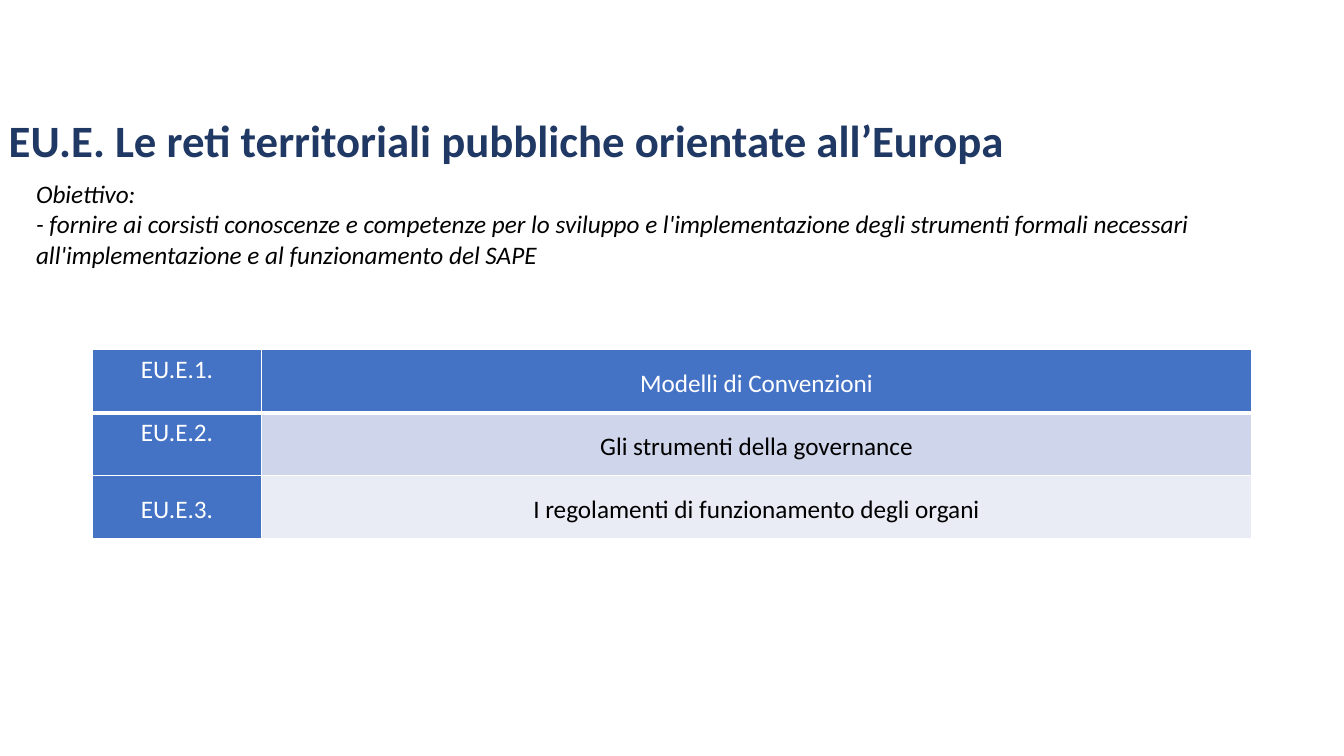
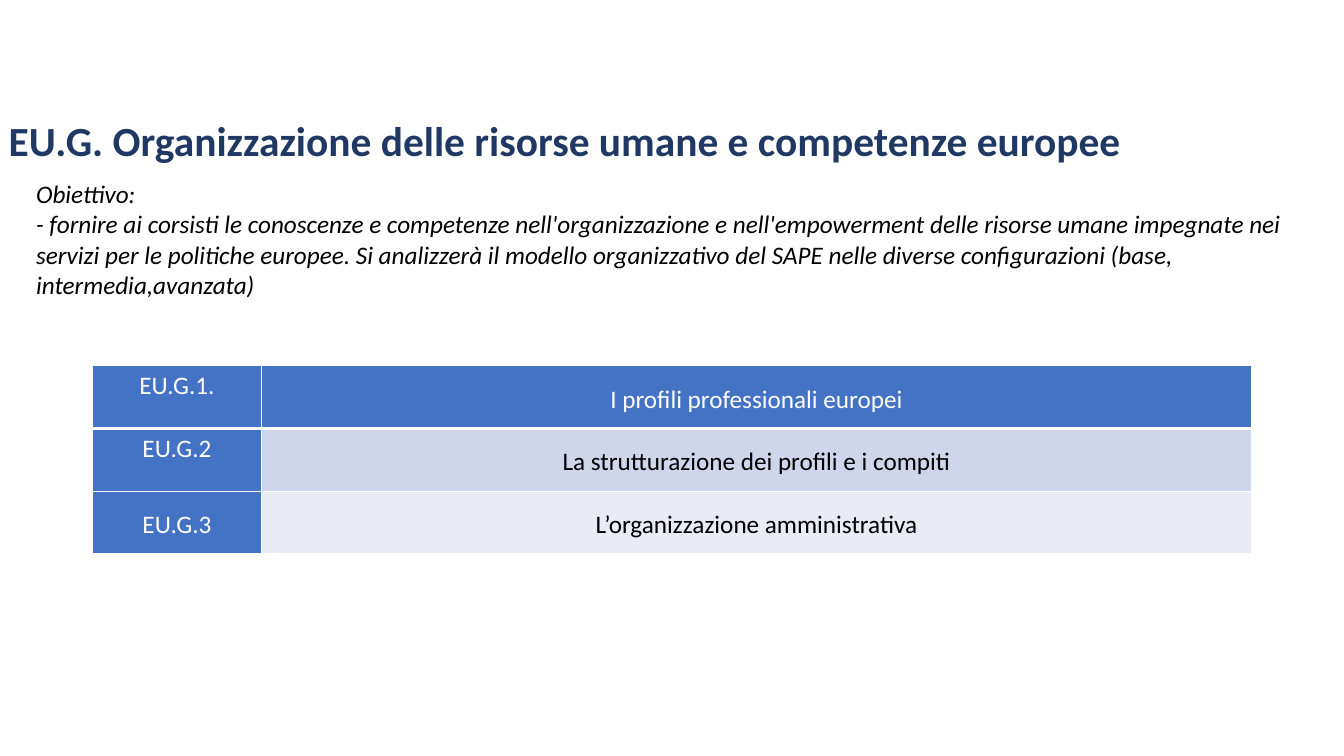
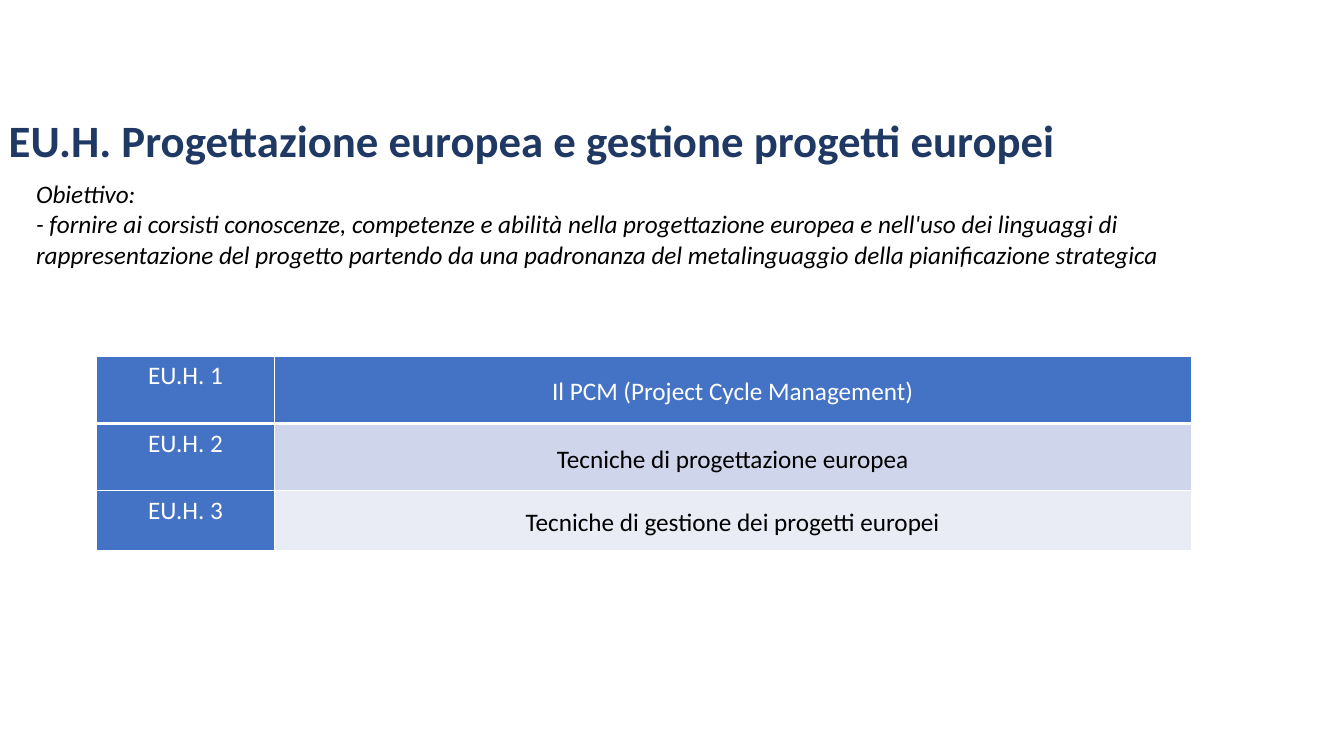
from lxml.etree import SubElement
from pptx import Presentation
from pptx.dml.color import RGBColor
from pptx.enum.text import MSO_ANCHOR, MSO_AUTO_SIZE, PP_ALIGN
from pptx.oxml.ns import qn
from pptx.util import Cm, Pt


def color(code):
    return RGBColor.from_string(code)


def write(frame, *lines, size=18, ink="000000", bold=False, italic=False,
          align=PP_ALIGN.LEFT, pitch=None, after=0):
    frame.word_wrap = True
    for index, line in enumerate(lines):
        para = frame.add_paragraph() if index else frame.paragraphs[0]
        para.alignment = align
        para.line_spacing = pitch
        para.space_after = Pt(after)
        run = para.add_run()
        run.text = line
        font = run.font
        font.name, font.size = Deck.face, Pt(size)
        font.bold, font.italic = bold, italic
        font.color.rgb = color(ink)


class Deck:
    """Hold the shared style and the current slide."""

    face = "Calibri"
    navy, blue, white, black = "203864", "4472C4", "FFFFFF", "000000"
    bands = ("E9EBF5", "CFD5EA")

    def __init__(self):
        self.file = Presentation()
        self.file.slide_width, self.file.slide_height = Cm(33.87), Cm(19.05)

    def start(self):
        self.slide = self.file.slides.add_slide(self.file.slide_layouts[6])

    def box(self, left, top, width, height):
        shape = self.slide.shapes.add_textbox(Cm(left), Cm(top), Cm(width), Cm(height))
        return shape.text_frame

    def title(self, text, size):
        frame = self.box(-0.03, 2.51, 29.21, 2.18)
        frame.vertical_anchor = MSO_ANCHOR.MIDDLE
        write(frame, text, size=size, ink=self.navy, bold=True, pitch=0.9)

    def goal(self, text, height):
        frame = self.box(0.66, 4.37, 32, height)
        frame.auto_size = MSO_AUTO_SIZE.SHAPE_TO_FIT_TEXT
        write(frame, "Obiettivo:", text, italic=True)

    def border(self, cell, row):
        props = cell._tc.get_or_add_tcPr()
        widths = {"L": 1, "R": 1, "T": 3 if row == 1 else 1, "B": 1 if row else 3}
        for side, width in widths.items():
            line = SubElement(props, qn(f"a:ln{side}"), w=str(Pt(width)))
            fill = SubElement(line, qn("a:solidFill"))
            SubElement(fill, qn("a:srgbClr"), val=self.white)

    def cell(self, cell, text, row, col, middle, after):
        self.border(cell, row)
        main = row == 0 or col == 0
        cell.fill.solid()
        cell.fill.fore_color.rgb = color(self.blue if main else self.bands[row % 2])
        cell.margin_left = cell.margin_right = Cm(0.19)
        cell.margin_top = cell.margin_bottom = 0
        cell.vertical_anchor = MSO_ANCHOR.MIDDLE if middle else MSO_ANCHOR.TOP
        write(cell.text_frame, text, ink=self.white if main else self.black,
              align=PP_ALIGN.CENTER, pitch=1.15, after=after)

    def table(self, data, left, top, cols, rows, after=10, low=True):
        frame = self.slide.shapes.add_table(
            len(rows), len(cols), Cm(left), Cm(top), Cm(sum(cols)), Cm(sum(rows)))
        grid = frame.table
        for col, width in enumerate(cols):
            grid.columns[col].width = Cm(width)
        for row, height in enumerate(rows):
            grid.rows[row].height = Cm(height)
            for col, text in enumerate(data[row]):
                middle = col == 1 or (low and row == len(rows) - 1)
                self.cell(grid.cell(row, col), text, row, col, middle, after)


PAGES = [
    dict(
        title="EU.E. Le reti territoriali pubbliche orientate all’Europa", size=32,
        goal="- fornire ai corsisti conoscenze e competenze per lo sviluppo e "
             "l'implementazione degli strumenti formali necessari "
             "all'implementazione e al funzionamento del SAPE",
        height=2.57,
        table=dict(
            data=[("EU.E.1.", "Modelli di Convenzioni"),
                  ("EU.E.2.", "Gli strumenti della governance"),
                  ("EU.E.3.", "I regolamenti di funzionamento degli organi")],
            left=2.34, top=8.81, cols=(4.24, 24.97), rows=[1.59] * 3)),
    dict(
        title="EU.G. Organizzazione delle risorse umane e competenze europee", size=29.6,
        goal="- fornire ai corsisti le conoscenze e competenze nell'organizzazione e "
             "nell'empowerment delle risorse umane impegnate nei servizi per le "
             "politiche europee. Si analizzerà il modello organizzativo del SAPE "
             "nelle diverse configurazioni (base, intermedia,avanzata)",
        height=3.33,
        table=dict(
            data=[("EU.G.1.", "I profili professionali europei"),
                  ("EU.G.2", "La strutturazione dei profili e i compiti"),
                  ("EU.G.3", "L’organizzazione amministrativa")],
            left=2.34, top=9.22, cols=(4.24, 24.97), rows=[1.58] * 3)),
    dict(
        title="EU.H. Progettazione europea e gestione progetti europei", size=32,
        goal="- fornire ai corsisti conoscenze, competenze e abilità nella "
             "progettazione europea e nell'uso dei linguaggi di rappresentazione "
             "del progetto partendo da una padronanza del metalinguaggio della "
             "pianificazione strategica",
        height=2.57,
        table=dict(
            data=[("EU.H. 1", "Il PCM (Project Cycle Management)"),
                  ("EU.H. 2", "Tecniche di progettazione europea"),
                  ("EU.H. 3", "Tecniche di gestione dei progetti europei")],
            left=2.44, top=8.97, cols=(4.47, 23.11), rows=(1.7, 1.7, 1.5),
            after=0, low=False)),
]


def main():
    deck = Deck()
    for page in PAGES:
        deck.start()
        deck.table(**page["table"])
        deck.goal(page["goal"], page["height"])
        deck.title(page["title"], page["size"])
    deck.file.save("out.pptx")


if __name__ == "__main__":
    main()
